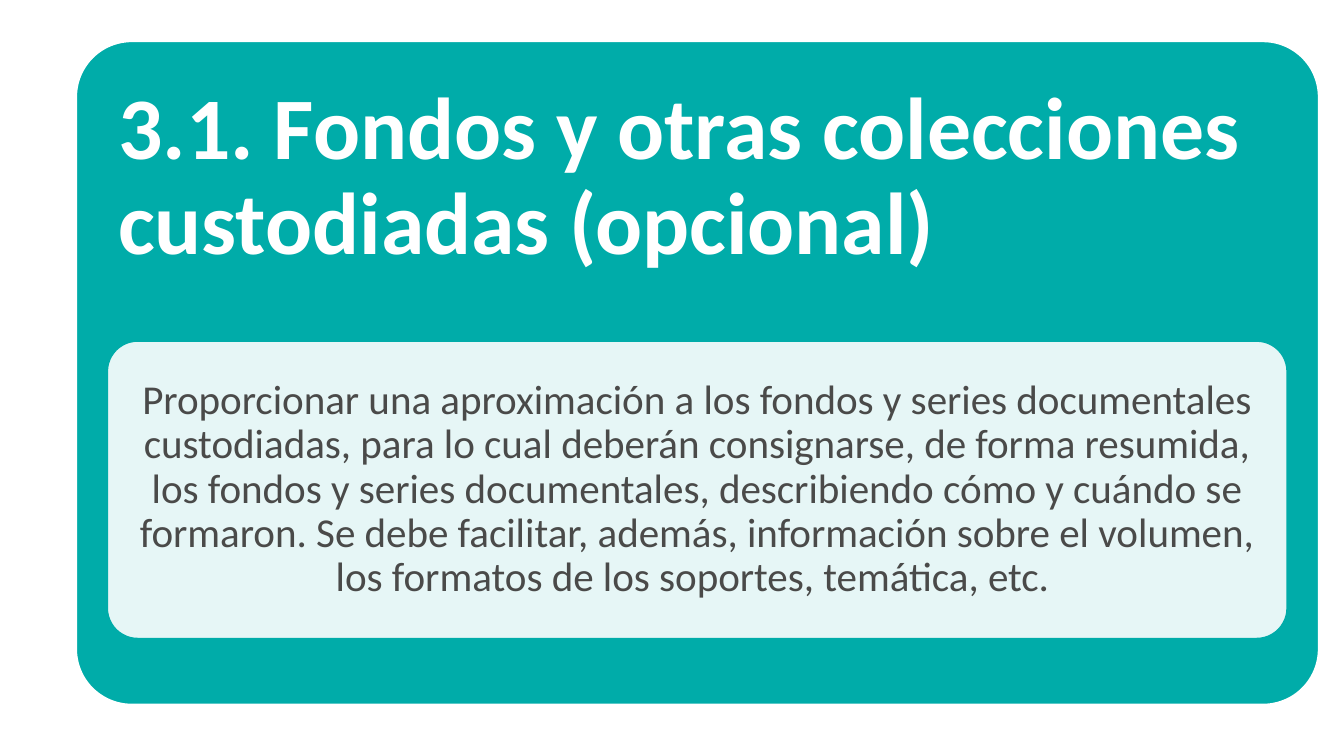
"""Build the slide on holdings and other collections in custody."""
from lxml.etree import SubElement
from pptx import Presentation
from pptx.dml.color import RGBColor
from pptx.enum.shapes import MSO_SHAPE as Shape
from pptx.enum.text import MSO_ANCHOR as Anchor, MSO_AUTO_SIZE as AutoSize, PP_ALIGN as Align
from pptx.oxml.ns import qn
from pptx.util import Pt

PX = 4572
WHITE, TEAL, GREY = "FFFFFF", "00ACA9", "4A4A49"


def color(value):
    return RGBColor.from_string(value)


def write(box, text, insets, anchor, align, size, ink, bold):
    frame = box.text_frame
    frame.text = text
    frame.word_wrap = True
    frame.auto_size = AutoSize.NONE
    frame.vertical_anchor = anchor
    frame.margin_left, frame.margin_top, frame.margin_right, frame.margin_bottom = [
        inset * PX for inset in insets]
    para = frame.paragraphs[0]
    para.alignment = align
    para.line_spacing = 0.9
    font = para.runs[0].font
    font.name, font.size, font.bold = "Calibri", Pt(size), bold
    font.color.rgb = color(ink)


deck = Presentation()
deck.slide_width, deck.slide_height = 2000 * PX, 1125 * PX
page = deck.slides.add_slide(deck.slide_layouts[5])

cards = []
for bounds, rounding, fill, line in [
    ((112, 60, 1852, 990), 0.085, TEAL, WHITE),
    ((158, 506, 1759, 446), 0.105, WHITE, TEAL),
]:
    card = page.shapes.add_shape(Shape.ROUNDED_RECTANGLE, *[length * PX for length in bounds])
    card.adjustments[0] = rounding
    card.shadow.inherit = False
    card.fill.solid()
    card.fill.fore_color.rgb = color(fill)
    card.line.color.rgb = color(line)
    card.line.width = Pt(2)
    cards.append(card)
panel, note = cards

tint = note.element.spPr.find(qn("a:solidFill")).find(qn("a:srgbClr"))
SubElement(tint, qn("a:alpha"), val="90000")

title = page.shapes.title
title.left, title.top, title.width, title.height = [length * PX for length in (136, 85, 1802, 940)]
panel.element.addnext(title.element)
write(title, "3.1. Fondos y otras colecciones custodiadas (opcional)",
      (40, 40, 40, 610), Anchor.TOP, Align.LEFT, 47, WHITE, True)
write(note, "Proporcionar una aproximación a los fondos y series documentales custodiadas, "
      "para lo cual deberán consignarse, de forma resumida, los fondos y series documentales, "
      "describiendo cómo y cuándo se formaron. Se debe facilitar, además, información sobre "
      "el volumen, los formatos de los soportes, temática, etc. ",
      (18, 18, 18, 18), Anchor.MIDDLE, Align.CENTER, 22, GREY, False)

deck.save("out.pptx")
